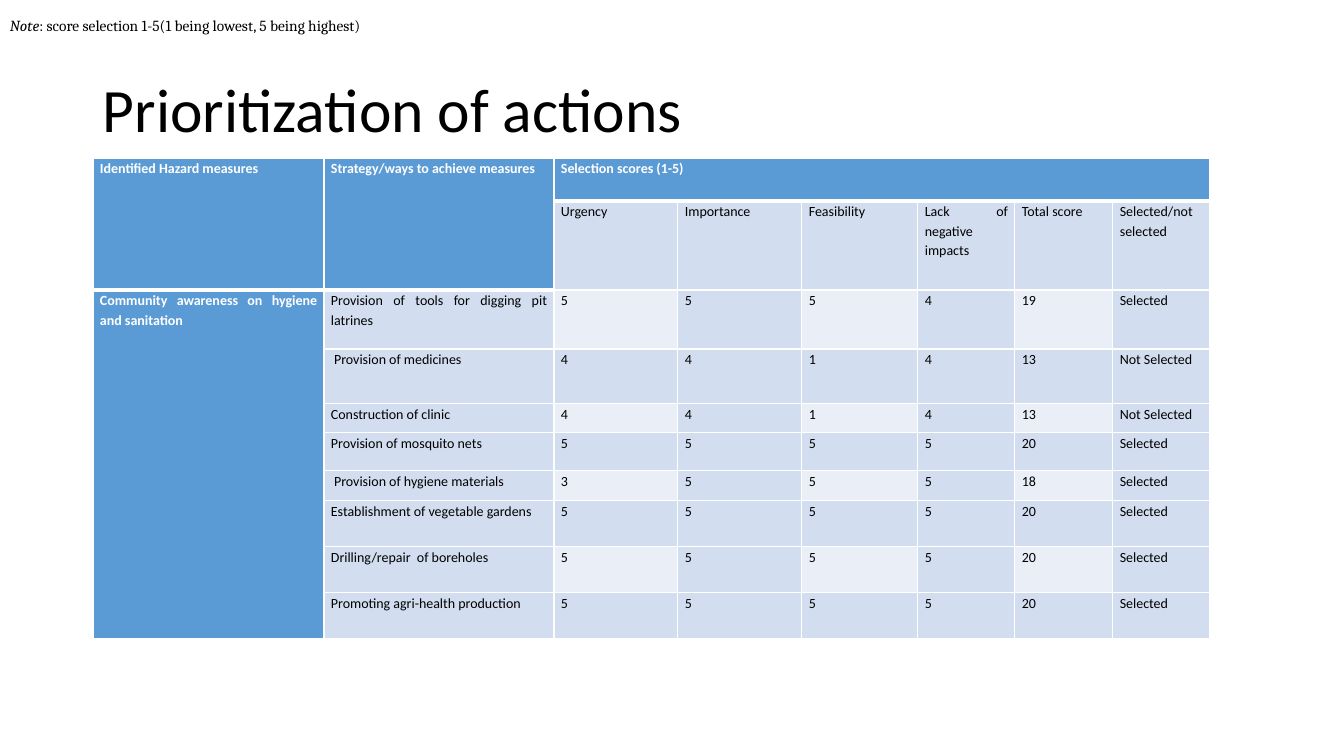
import pptx
import pptx.util
import pptx.dml.color
import pptx.enum.text
import pptx.oxml.ns
import lxml.etree

TITLE = "Prioritization of actions"
NOTE = [("Note", True), (": score selection 1-5(1 being lowest, 5 being highest)", False)]
HEADS = ["Identified Hazard measures", "Strategy/ways to achieve measures", "Selection scores (1-5)"]
SCORES = ["Urgency", "Importance", "Feasibility", "Lack of negative impacts",
          "Total score", "Selected/not selected"]
HAZARD = "Community awareness on hygiene and sanitation"
ACTIONS = [
    ("Provision of tools for digging pit latrines", (5, 5, 5, 4), "Selected"),
    (" Provision of medicines", (4, 4, 1, 4), "Not Selected"),
    ("Construction of clinic", (4, 4, 1, 4), "Not Selected"),
    ("Provision of mosquito nets", (5, 5, 5, 5), "Selected"),
    (" Provision of hygiene materials", (3, 5, 5, 5), "Selected"),
    ("Establishment of vegetable gardens", (5, 5, 5, 5), "Selected"),
    ("Drilling/repair  of boreholes", (5, 5, 5, 5), "Selected"),
    ("Promoting agri-health production", (5, 5, 5, 5), "Selected"),
]
COLS = [231, 230, 124, 124, 116, 97, 98, 97]
ROWS = [43, 89, 59, 55, 29, 38, 30, 46, 46, 46]
MERGES = [(0, 0, 1, 0), (0, 1, 1, 1), (0, 2, 0, 7), (2, 0, 9, 0)]
BLUE, PALE, LIGHT, WHITE, BLACK = "5B9BD5", "D2DEEF", "EAEFF7", "FFFFFF", "000000"
ALIGN = pptx.enum.text.PP_ALIGN
MIDDLE = pptx.enum.text.MSO_ANCHOR.MIDDLE


def px(size):
    return pptx.util.Emu(round(size * 914400 / 100.8))


def hue(code):
    return pptx.dml.color.RGBColor.from_string(code)


def write(frame, runs, size, font="Calibri", color=BLACK, bold=False,
          align=ALIGN.JUSTIFY, space=1.0, after=0):
    frame.word_wrap = True
    para = frame.paragraphs[0]
    para.alignment, para.line_spacing = align, space
    para.space_after = pptx.util.Pt(after)
    for text, slant in runs:
        run = para.add_run()
        run.text = text
        face = run.font
        face.name, face.size = font, pptx.util.Pt(size)
        face.bold, face.italic = bold, slant
        face.color.rgb = hue(color)


def edge(cell, widths):
    props = cell._tc.get_or_add_tcPr()
    for spot, (side, width) in enumerate(widths.items()):
        line = lxml.etree.Element(pptx.oxml.ns.qn("a:ln" + side), w=str(pptx.util.Pt(width)))
        fill = lxml.etree.SubElement(line, pptx.oxml.ns.qn("a:solidFill"))
        lxml.etree.SubElement(fill, pptx.oxml.ns.qn("a:srgbClr"), val=WHITE)
        props.insert(spot, line)


def label(slide, box, runs, **style):
    frame = slide.shapes.add_textbox(*map(px, box)).text_frame
    frame.vertical_anchor = MIDDLE
    write(frame, runs, **style)


def build_grid(slide):
    texts = [HEADS + [""] * 5, ["", ""] + SCORES]
    for spot, (action, marks, choice) in enumerate(ACTIONS):
        texts.append([HAZARD if spot == 0 else "", action, *map(str, marks),
                      str(sum(marks)), choice])
    grid = slide.shapes.add_table(len(ROWS), len(COLS), px(93), px(158),
                                  px(sum(COLS)), px(sum(ROWS))).table
    for col, width in zip(grid.columns, COLS):
        col.width = px(width)
    for row, height in zip(grid.rows, ROWS):
        row.height = px(height)
    for top, left, low, right in MERGES:
        grid.cell(top, left).merge(grid.cell(low, right))
    for r, line in enumerate(texts):
        for c, text in enumerate(line):
            cell = grid.cell(r, c)
            head = r == 0 or c == 0 or (r == 1 and c == 1)
            band = r >= 2 and r % 2 == 0 and c in (2, 4, 6)
            cell.fill.solid()
            cell.fill.fore_color.rgb = hue(BLUE if head else LIGHT if band else PALE)
            cell.margin_left = cell.margin_right = px(7)
            cell.margin_top = cell.margin_bottom = 0
            split = 2 if c < 2 else 1
            edge(cell, {"L": 1, "R": 1, "T": 3 if r == split else 1,
                        "B": 3 if r < split else 1})
            if text:
                write(cell.text_frame, [(text, False)], size=10, bold=head,
                      color=WHITE if head else BLACK, space=1.15, after=10)


def main():
    deck = pptx.Presentation()
    deck.slide_width, deck.slide_height = px(1344), px(756)
    slide = deck.slides.add_slide(deck.slide_layouts[6])
    label(slide, (93, 40, 1159, 146), [(TITLE, False)], size=44, align=ALIGN.LEFT, space=0.9)
    build_grid(slide)
    label(slide, (0, 0, 1344, 50), NOTE, size=11, font="Cambria")
    deck.save("out.pptx")


if __name__ == "__main__":
    main()
